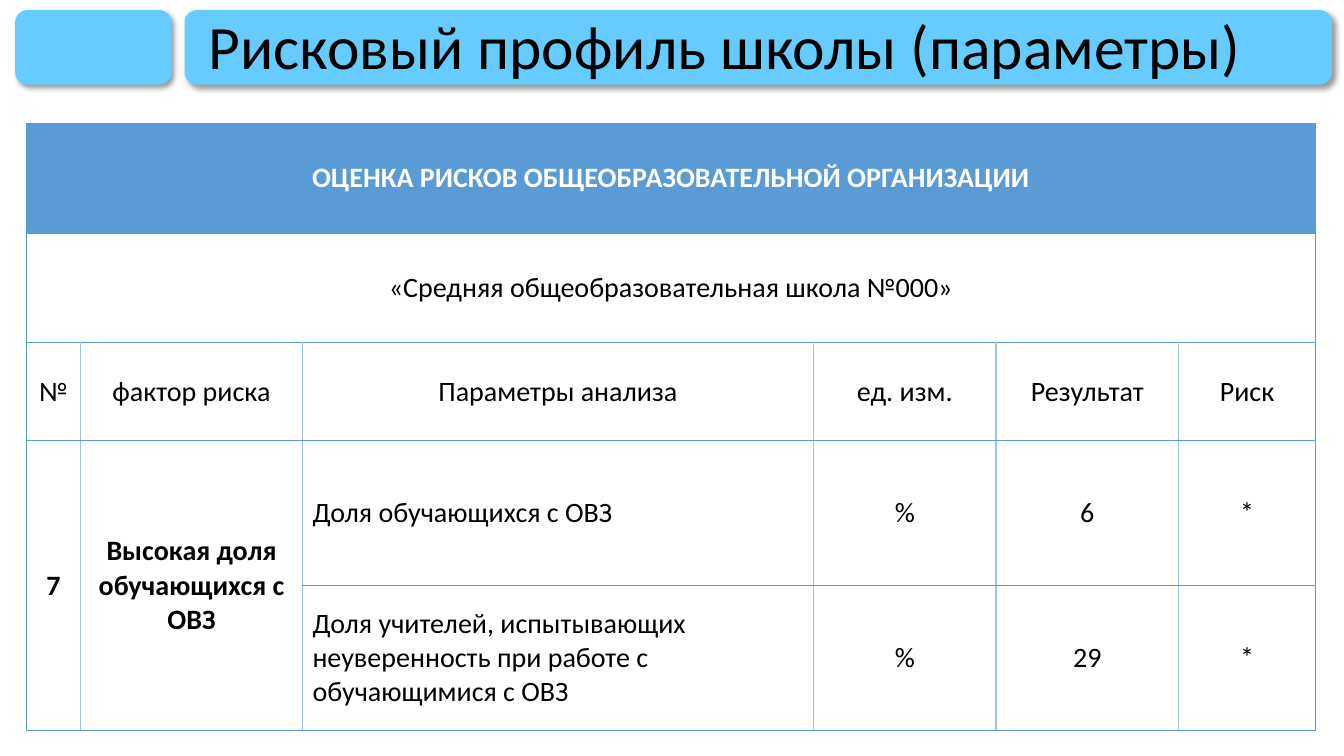
from lxml import etree
from pptx import Presentation
from pptx.dml.color import RGBColor
from pptx.enum.shapes import MSO_SHAPE as Shape
from pptx.enum.text import MSO_ANCHOR as Anchor, PP_ALIGN as Align
from pptx.oxml import parse_xml
from pptx.oxml.ns import nsdecls, qn
from pptx.util import Inches, Pt

TITLE = "Рисковый профиль школы (параметры)"
ROWS = [
    ["ОЦЕНКА РИСКОВ ОБЩЕОБРАЗОВАТЕЛЬНОЙ ОРГАНИЗАЦИИ"],
    ["«Средняя общеобразовательная школа №000»"],
    ["№", "фактор риска", "Параметры анализа", "ед. изм.", "Результат", "Риск"],
    ["7", "Высокая доля обучающихся с ОВЗ", "Доля обучающихся с ОВЗ", "%", "6", "*"],
    ["", "", "Доля учителей, испытывающих неуверенность при работе с обучающимися с ОВЗ",
     "%", "29", "*"],
]
MERGES = [(0, 0, 0, 5), (1, 0, 1, 5), (3, 0, 4, 0), (3, 1, 4, 1)]
BOLD_CELLS = {(0, 0), (3, 0), (3, 1)}
LEFT_CELLS = {(3, 2), (4, 2)}
COLUMN_WIDTHS = [0.54, 2.2, 5.07, 1.81, 1.81, 1.36]
ROW_HEIGHTS = [1.09, 1.09, 0.97, 1.44, 1.44]
TABLE_LEFT, TABLE_TOP = 0.26, 1.22
BAND_TOP, BAND_HEIGHT = 0.1, 0.74
BANDS = [(1.83, 11.38), (0.15, 1.55)]
FONT = "Calibri"

BLACK = RGBColor(0x00, 0x00, 0x00)
WHITE = RGBColor(0xFF, 0xFF, 0xFF)
SKY = RGBColor(0x66, 0xCC, 0xFF)
BLUE = RGBColor(0x5B, 0x9B, 0xD5)
PALE_BLUE = RGBColor(0x9D, 0xC3, 0xE6)
OUTER, INNER = (BLUE, 0.5), (PALE_BLUE, 1)
PLAIN_STYLE = "{2D5ABB26-0587-4C30-8999-92F81FD0307C}"


def write(frame, text, size=20, color=BLACK, bold=False, align=Align.CENTER, spacing=1.0):
    para = frame.paragraphs[0]
    para.alignment, para.line_spacing = align, spacing
    span = para.add_run()
    span.text = text
    font = span.font
    font.name, font.size, font.bold = FONT, Pt(size), bold
    font.color.rgb = color


def add_band(page, left, width):
    band = page.shapes.add_shape(Shape.ROUNDED_RECTANGLE, Inches(left), Inches(BAND_TOP),
                                 Inches(width), Inches(BAND_HEIGHT))
    band.fill.solid()
    band.fill.fore_color.rgb = SKY
    band.line.fill.background()
    band.shadow.inherit = False
    effects = band.element.spPr.find(qn("a:effectLst"))
    shadow = etree.SubElement(effects, qn("a:outerShdw"), blurRad=str(Pt(4)),
                              dist=str(Pt(3)), dir=str(45 * 60000), rotWithShape="0")
    color = etree.SubElement(shadow, qn("a:srgbClr"), val=str(BLACK))
    etree.SubElement(color, qn("a:alpha"), val="40000")


def set_borders(cell, row, column):
    last_row, last_column = len(ROW_HEIGHTS) - 1, len(COLUMN_WIDTHS) - 1
    edges = {"L": INNER if column else OUTER,
             "R": OUTER if column == last_column or row < 2 else INNER,
             "T": OUTER, "B": OUTER}
    if cell.is_spanned:
        outside = {"R": column == last_column, "B": row == last_row}
        edges = {side: OUTER for side, shown in outside.items() if shown}
    properties = cell._tc.get_or_add_tcPr()
    for index, (side, (color, width)) in enumerate(edges.items()):
        properties.insert(index, parse_xml(
            f'<a:ln{side} {nsdecls("a")} w="{Pt(width)}"><a:solidFill>'
            f'<a:srgbClr val="{color}"/></a:solidFill></a:ln{side}>'))


def add_risk_table(page):
    graphic = page.shapes.add_table(
        len(ROW_HEIGHTS), len(COLUMN_WIDTHS), Inches(TABLE_LEFT), Inches(TABLE_TOP),
        Inches(sum(COLUMN_WIDTHS)), Inches(sum(ROW_HEIGHTS)))
    next(graphic.element.iter(qn("a:tableStyleId"))).text = PLAIN_STYLE
    table = graphic.table
    for column, width in zip(table.columns, COLUMN_WIDTHS):
        column.width = Inches(width)
    for row, height in zip(table.rows, ROW_HEIGHTS):
        row.height = Inches(height)
    for top, left, bottom, right in MERGES:
        table.cell(top, left).merge(table.cell(bottom, right))
    for row in range(len(ROW_HEIGHTS)):
        for column in range(len(COLUMN_WIDTHS)):
            cell = table.cell(row, column)
            cell.fill.solid()
            cell.fill.fore_color.rgb = WHITE if row else BLUE
            set_borders(cell, row, column)
            if not cell.is_spanned:
                cell.vertical_anchor = Anchor.MIDDLE
                place = (row, column)
                write(cell.text_frame, ROWS[row][column], bold=place in BOLD_CELLS,
                      color=BLACK if row else WHITE,
                      align=Align.LEFT if place in LEFT_CELLS else Align.CENTER)


def main():
    """Build the school risk profile slide."""
    deck = Presentation()
    deck.slide_width, deck.slide_height = Inches(13.33), Inches(7.5)
    page = deck.slides.add_slide(deck.slide_layouts[6])
    for left, width in BANDS:
        add_band(page, left, width)
    box = page.shapes.add_textbox(Inches(1.97), Inches(0.16), Inches(11.1), Inches(0.66))
    box.text_frame.word_wrap = True
    box.text_frame.vertical_anchor = Anchor.MIDDLE
    write(box.text_frame, TITLE, size=44, align=Align.LEFT, spacing=0.9)
    add_risk_table(page)
    deck.save("out.pptx")


if __name__ == "__main__":
    main()
